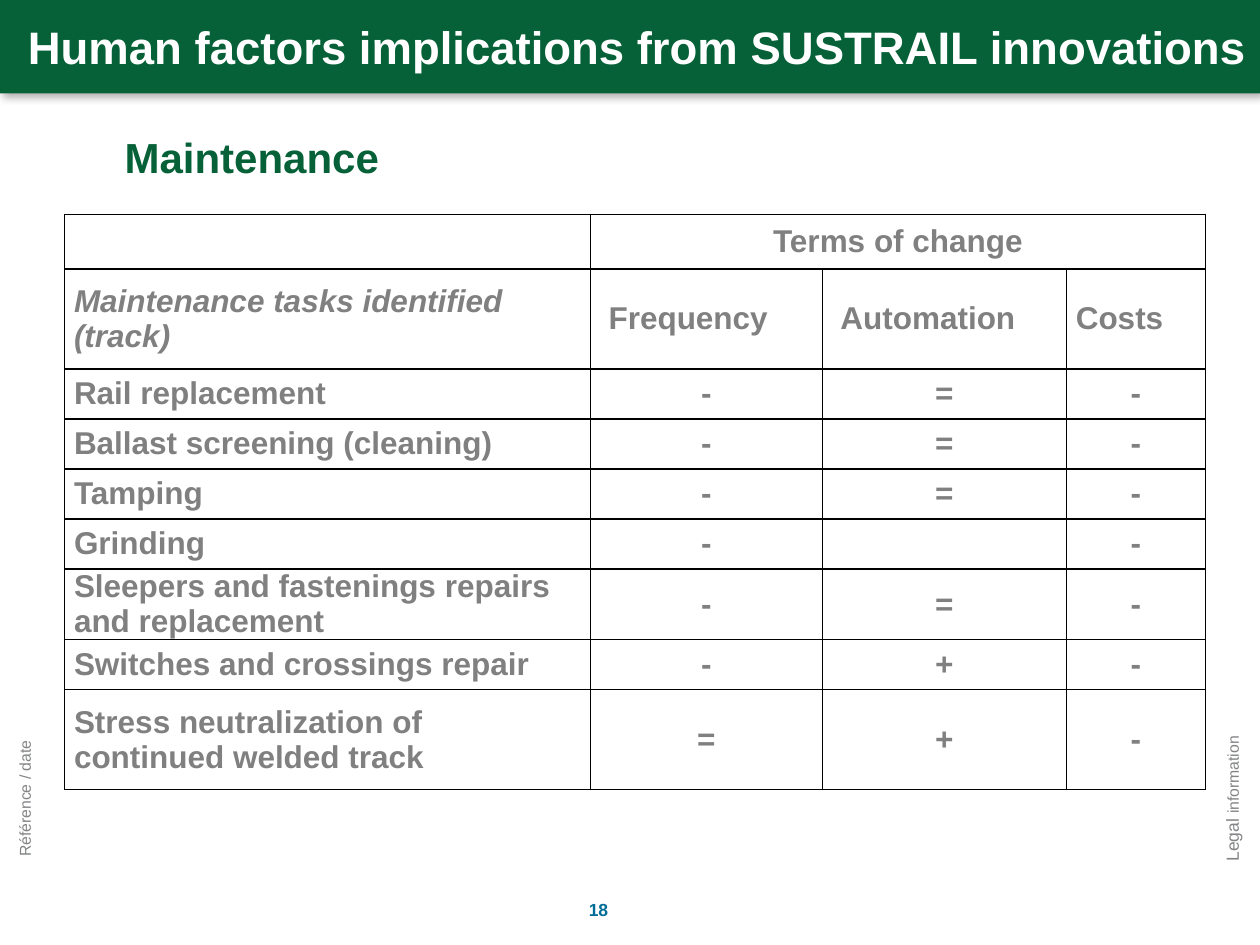
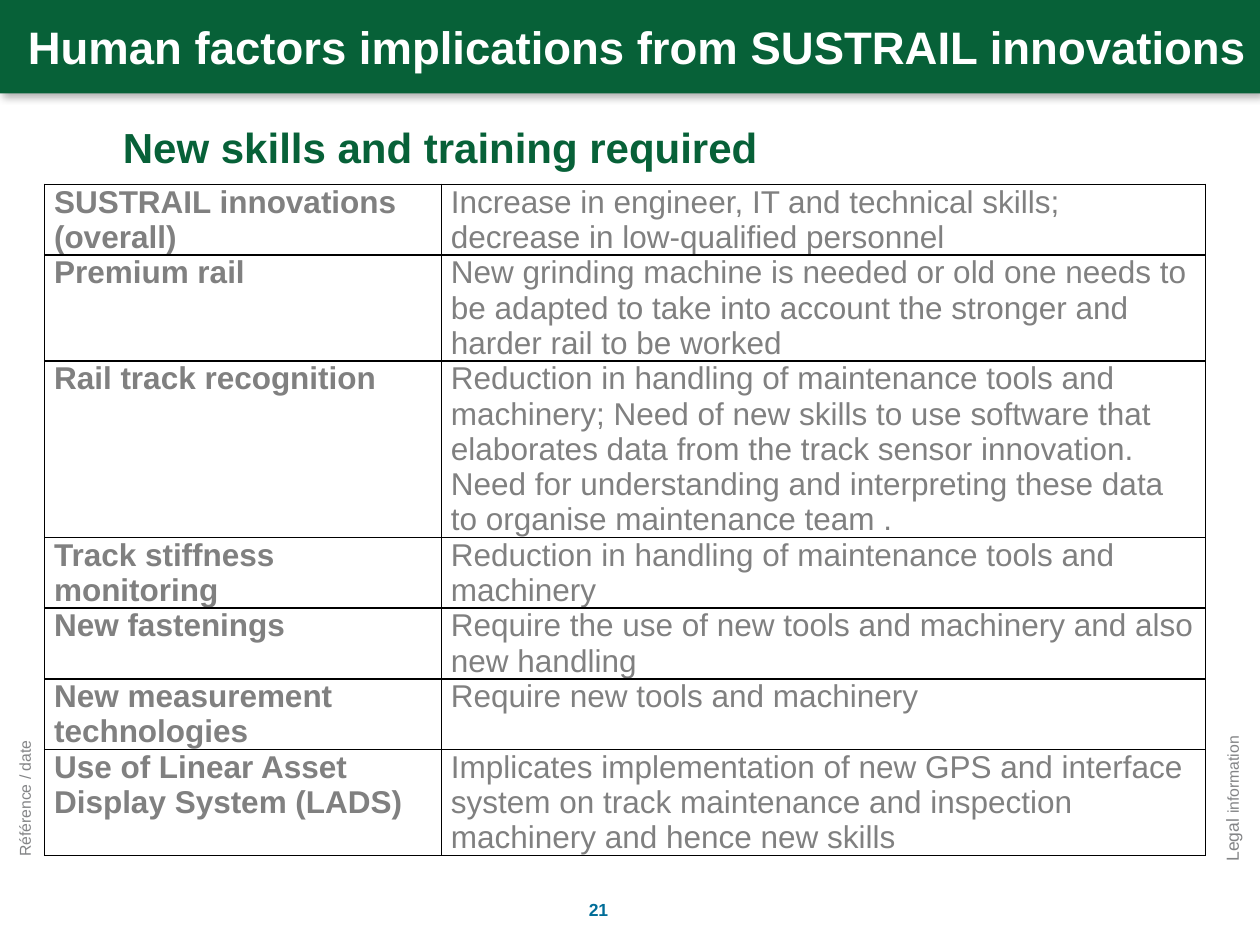
from lxml.etree import SubElement
from pptx import Presentation
from pptx.dml.color import RGBColor
from pptx.enum.text import MSO_ANCHOR as Anchor, MSO_AUTO_SIZE as AutoSize, PP_ALIGN as Align
from pptx.oxml import parse_xml
from pptx.oxml.ns import nsdecls, qn
from pptx.util import Pt

TITLE = "Human factors implications from SUSTRAIL innovations"
GREEN, WHITE, GREY, PALE, BLUE, BLACK = "076138", "FFFFFF", "808080", "838486", "006D98", "000000"
LINE_HEIGHT, CELL_TOP = 20.1, 0.2

MAINTENANCE = {
    "subtitle": "Maintenance", "subtitle_at": (71.2, 75.2), "page": "18",
    "table_at": (36.9, 122.5), "columns": [300.5, 132.5, 139.5, 79.5],
    "heights": [31.2, 57.1, 28.6, 28.6, 28.6, 28.6, 40.4, 28.6, 57.1],
    "rows": [
        ("", "Terms of change", "", ""),
        ("Maintenance tasks identified (track)", "Frequency", "Automation", "Costs"),
        ("Rail replacement", "-", "=", "-"),
        ("Ballast screening (cleaning)", "-", "=", "-"),
        ("Tamping", "-", "=", "-"),
        ("Grinding", "-", "", "-"),
        ("Sleepers and fastenings repairs and replacement", "-", "=", "-"),
        ("Switches and crossings repair", "-", "+", "-"),
        ("Stress neutralization of continued welded track", "=", "+", "-"),
    ],
}

SKILLS = {
    "subtitle": "New skills and training required", "subtitle_at": (70.2, 69.7), "page": "21",
    "table_at": (25.5, 105.4), "columns": [226.8, 436.5],
    "heights": [lines * LINE_HEIGHT + CELL_TOP for lines in (2, 3, 5, 2, 2, 2, 3)],
    "rows": [
        ("SUSTRAIL innovations (overall)",
         "Increase in engineer, IT and technical skills; decrease in low-qualified personnel"),
        ("Premium rail",
         "New grinding machine is needed or old one needs to be adapted to take into account "
         "the stronger and harder rail to be worked"),
        ("Rail track recognition",
         "Reduction in handling of maintenance tools and machinery; Need of new skills to use "
         "software that elaborates data from the track sensor innovation. Need for understanding "
         "and interpreting these data to organise maintenance team ."),
        ("Track stiffness monitoring", "Reduction in handling of maintenance tools and machinery"),
        ("New fastenings", "Require the use of new tools and machinery and also new handling"),
        ("New measurement technologies", "Require new tools and machinery"),
        ("Use of Linear Asset Display System (LADS)",
         "Implicates implementation of new GPS and interface system on track maintenance and "
         "inspection machinery and hence new skills"),
    ],
}

SIDE_NOTES = [
    ((504, 283.7, 406, 25.2), [("Legal ", 10), ("information", 9)]),
    ((-185, 280.8, 406, 25.9), [("Référence / date", 9)]),
]


def rgb(value):
    return RGBColor.from_string(value)


def assign(target, formats):
    for key, value in formats.items():
        setattr(target, key, value)


def write(paragraph, text, size, color, bold=False, italic=False, align=Align.LEFT):
    paragraph.alignment = align
    run = paragraph.add_run()
    run.text = text
    assign(run.font, {"name": "Arial", "size": Pt(size), "bold": bold, "italic": italic})
    run.font.color.rgb = rgb(color)


def write_cell(cell, text, **formats):
    paragraph = cell.text_frame.paragraphs[0]
    paragraph.line_spacing = Pt(LINE_HEIGHT)
    write(paragraph, text, 18, GREY, **formats)


def add_label(slide, box, runs, color, bold=False, align=Align.LEFT, rotation=0, insets=None):
    label = slide.shapes.add_textbox(*map(Pt, box))
    label.rotation = rotation
    frame = label.text_frame
    assign(frame, {"word_wrap": True, **(insets or {})})
    for text, size in runs:
        write(frame.paragraphs[0], text, size, color, bold, align=align)


def add_title_band(slide):
    band = slide.shapes.title
    assign(band, {"left": 0, "top": 0, "width": Pt(720), "height": Pt(53.4)})
    band.fill.solid()
    band.fill.fore_color.rgb = rgb(GREEN)
    band.line.fill.background()
    band.element.spPr.append(parse_xml(
        f'<a:effectLst {nsdecls("a")}><a:outerShdw blurRad="{Pt(4.5)}" dist="{Pt(2.6)}" '
        f'dir="{53 * 60000}" algn="tl" rotWithShape="0"><a:srgbClr val="{BLACK}">'
        '<a:alpha val="30000"/></a:srgbClr></a:outerShdw></a:effectLst>'))
    assign(band.text_frame, {"auto_size": AutoSize.NONE, "word_wrap": True,
                             "vertical_anchor": Anchor.MIDDLE})
    write(band.text_frame.paragraphs[0], TITLE, 26, WHITE, bold=True, align=Align.RIGHT)


def add_borders(cell):
    properties = cell._tc.get_or_add_tcPr()
    for index, side in enumerate(("lnL", "lnR", "lnT", "lnB")):
        border = SubElement(properties, qn(f"a:{side}"), w=str(Pt(1)))
        fill = SubElement(border, qn("a:solidFill"))
        SubElement(fill, qn("a:srgbClr"), val=BLACK)
        properties.insert(index, border)


def add_grid(slide, content, anchor):
    rows, columns, heights = content["rows"], content["columns"], content["heights"]
    box = (*content["table_at"], sum(columns), sum(heights))
    grid = slide.shapes.add_table(len(rows), len(columns), *map(Pt, box)).table
    assign(grid, {"first_row": False, "horz_banding": False})
    for column, width in zip(grid.columns, columns):
        column.width = Pt(width)
    for row, height in zip(grid.rows, heights):
        row.height = Pt(height)
        for cell in row.cells:
            assign(cell, {"margin_left": Pt(5.4), "margin_right": Pt(5.4),
                          "margin_top": Pt(CELL_TOP), "margin_bottom": 0,
                          "vertical_anchor": anchor})
            cell.fill.background()
            add_borders(cell)
    return grid


def add_page(deck, content):
    slide = deck.slides.add_slide(deck.slide_layouts[5])
    add_title_band(slide)
    for box, runs in SIDE_NOTES:
        add_label(slide, box, runs, PALE, rotation=270)
    no_insets = dict.fromkeys(("margin_left", "margin_right", "margin_top", "margin_bottom"), 0)
    add_label(slide, (*content["subtitle_at"], 600, 28), [(content["subtitle"], 24)],
              GREEN, bold=True, insets=no_insets)
    add_label(slide, (258.1, 510.1, 167.8, 15.1), [(content["page"], 10)],
              BLUE, bold=True, align=Align.CENTER)
    return slide


def add_maintenance(deck):
    grid = add_grid(add_page(deck, MAINTENANCE), MAINTENANCE, Anchor.MIDDLE)
    grid.cell(0, 1).merge(grid.cell(0, 3))
    for column in (1, 2):
        grid.cell(1, column).margin_left = Pt(10.4)
    for r, texts in enumerate(MAINTENANCE["rows"]):
        for c, text in enumerate(texts):
            if text:
                align = Align.LEFT if c == 0 or r == 1 else Align.CENTER
                write_cell(grid.cell(r, c), text, bold=True, italic=(r, c) == (1, 0), align=align)


def add_skills(deck):
    grid = add_grid(add_page(deck, SKILLS), SKILLS, Anchor.TOP)
    for r, texts in enumerate(SKILLS["rows"]):
        for c, text in enumerate(texts):
            write_cell(grid.cell(r, c), text, bold=c == 0)


def main():
    deck = Presentation()
    assign(deck, {"slide_width": Pt(720), "slide_height": Pt(540)})
    add_maintenance(deck)
    add_skills(deck)
    deck.save("out.pptx")


if __name__ == "__main__":
    main()
